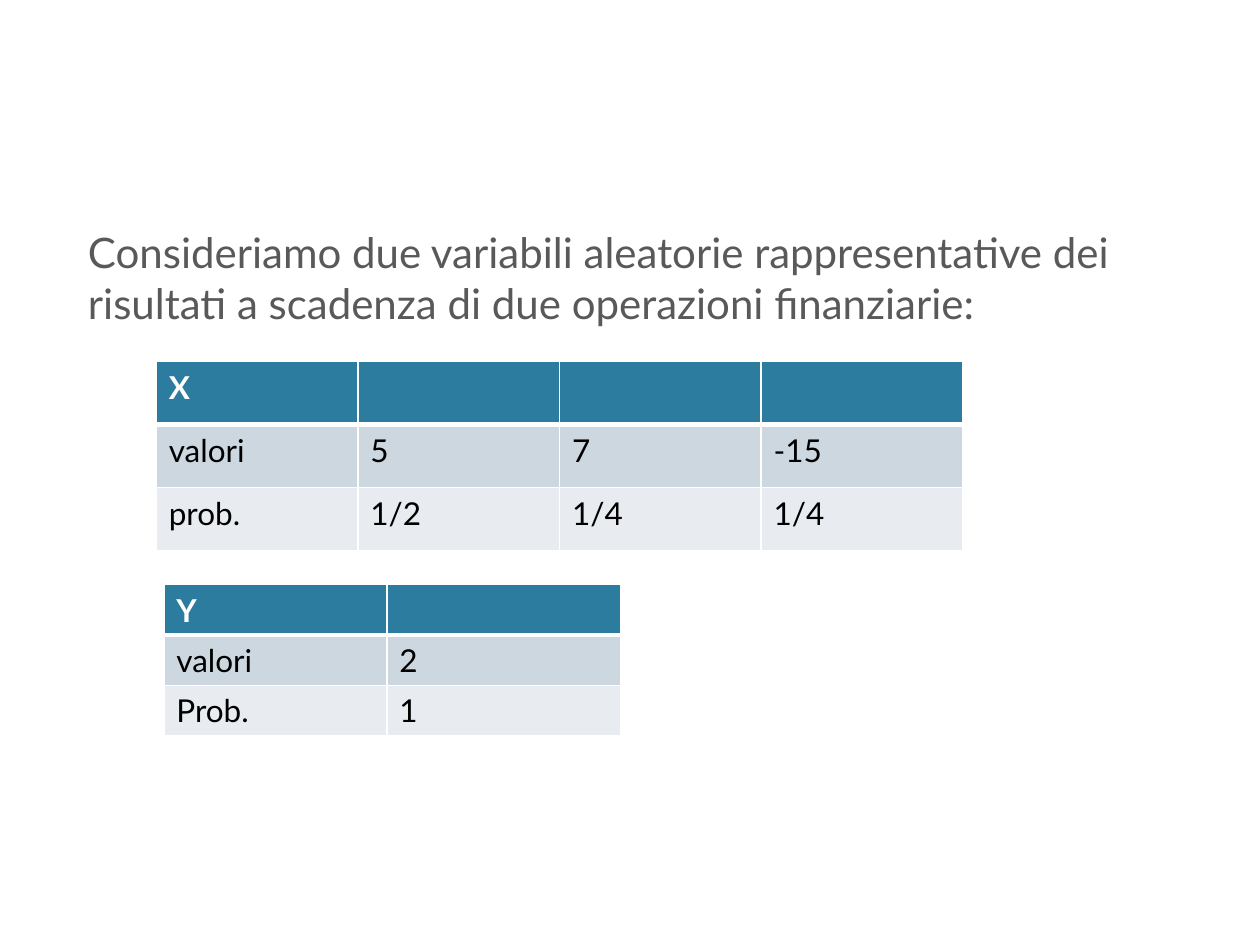
from lxml import etree
from pptx import Presentation
from pptx.dml.color import RGBColor
from pptx.oxml.ns import qn
from pptx.util import Inches, Pt

FONT = "Lato"
WHITE = RGBColor(0xFF, 0xFF, 0xFF)
BLACK = RGBColor(0x00, 0x00, 0x00)
GREY = RGBColor(0x59, 0x59, 0x59)
HEADER_BLUE = RGBColor(0x2C, 0x7C, 0x9F)
BAND_DARK = RGBColor(0xCD, 0xD7, 0xDF)
BAND_LIGHT = RGBColor(0xE8, 0xEC, 0xF0)
ROW_FILLS = (HEADER_BLUE, BAND_DARK, BAND_LIGHT)

X_ROWS = (
    ("X", "", "", ""),
    ("valori", "5", "7", "-15"),
    ("prob.", "1/2", "1/4", "1/4"),
)
Y_ROWS = (
    ("Y", ""),
    ("valori", "2"),
    ("Prob.", "1"),
)


def format_font(font, size, color, bold=False):
    font.name = FONT
    font.size = Pt(size)
    font.bold = bold
    font.color.rgb = color


def set_borders(cell, widths):
    """Draw white cell borders; widths maps a side tag to points."""
    properties = cell._tc.get_or_add_tcPr()
    for position, (side, width) in enumerate(widths.items()):
        line = etree.Element(qn(f"a:{side}"), w=str(Pt(width)))
        fill = etree.SubElement(line, qn("a:solidFill"))
        etree.SubElement(fill, qn("a:srgbClr"), val=str(WHITE))
        properties.insert(position, line)


def add_introduction(slide, left, top, width, height):
    text_box = slide.shapes.add_textbox(left, top, width, height)
    text_frame = text_box.text_frame
    text_frame.word_wrap = True
    text_frame.text = (
        "Consideriamo due variabili aleatorie rappresentative dei "
        "risultati a scadenza di due operazioni finanziarie:"
    )
    paragraph = text_frame.paragraphs[0]
    paragraph.space_before = Pt(20)
    format_font(paragraph.runs[0].font, 24, GREY)


def add_distribution_table(slide, left, top, column_widths, row_height, rows):
    """Add a table of values and probabilities under a header row."""
    table = slide.shapes.add_table(
        len(rows), len(column_widths), left, top,
        sum(column_widths), row_height * len(rows),
    ).table
    for column, width in zip(table.columns, column_widths):
        column.width = width

    for row_index, values in enumerate(rows):
        table.rows[row_index].height = row_height
        is_header = row_index == 0
        widths = {
            "lnL": 1,
            "lnR": 1,
            "lnT": 3 if row_index == 1 else 1,
            "lnB": 3 if is_header else 1,
        }
        for column_index, value in enumerate(values):
            cell = table.cell(row_index, column_index)
            cell.fill.solid()
            cell.fill.fore_color.rgb = ROW_FILLS[row_index]
            set_borders(cell, widths)
            cell.text_frame.text = value
            color = WHITE if is_header else BLACK
            for run in cell.text_frame.paragraphs[0].runs:
                format_font(run.font, 18, color, bold=is_header)


def main():
    presentation = Presentation()
    presentation.slide_width = Inches(10)
    presentation.slide_height = Inches(7.5)
    slide = presentation.slides.add_slide(presentation.slide_layouts[6])

    add_introduction(slide, Inches(0.6), Inches(1.75), Inches(8.8), Inches(4.75))
    add_distribution_table(
        slide, Inches(1.24), Inches(2.87), [Inches(1.6)] * 4, Inches(0.5), X_ROWS
    )
    add_distribution_table(
        slide, Inches(1.3), Inches(4.64), [Inches(1.77), Inches(1.86)],
        Inches(0.4), Y_ROWS,
    )
    presentation.save("out.pptx")


if __name__ == "__main__":
    main()
